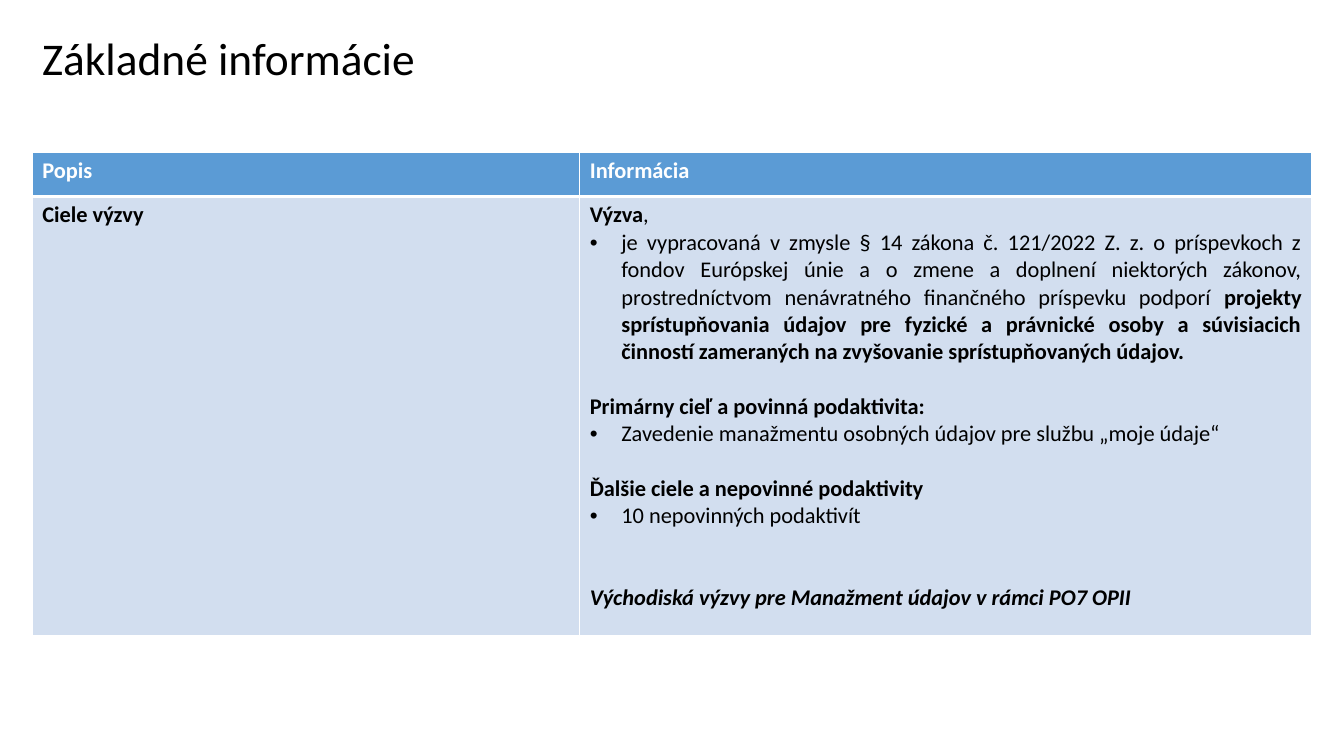
from dataclasses import dataclass

from lxml.etree import SubElement
from pptx import Presentation
from pptx.dml.color import RGBColor
from pptx.enum.text import MSO_ANCHOR, PP_ALIGN
from pptx.oxml.ns import qn
from pptx.util import Inches, Length, Pt

FONT = "Calibri"
BLACK, WHITE = "000000", "FFFFFF"
HEADER_FILL, BODY_FILL = "5B9BD5", "D2DEEF"
BODY_SIZE = 16
LINE_GAP = 19.5
LEFT_COLUMN = 3.2
HANGING_INDENT = 3.13


@dataclass(frozen=True)
class Line:
    runs: tuple[tuple[str, bool], ...]
    bullet: bool = False
    justified: bool = False
    italic: bool = False
    lines_before: int = 0


@dataclass(frozen=True)
class CellStyle:
    fill: str
    color: str
    borders: tuple[tuple[str, float], ...]


HEADER = CellStyle(HEADER_FILL, WHITE, (("lnL", 1), ("lnR", 1), ("lnT", 1), ("lnB", 3)))
BODY = CellStyle(BODY_FILL, BLACK, (("lnL", 1), ("lnR", 1), ("lnT", 3), ("lnB", 1)))

GOALS = [
    Line((("Výzva", True), (",", False)), justified=True),
    Line((
        ("je vypracovaná v zmysle § 14 zákona č. 121/2022 Z. z. o príspevkoch z fondov "
         "Európskej únie a o zmene a doplnení niektorých zákonov, prostredníctvom "
         "nenávratného finančného príspevku podporí ", False),
        ("projekty sprístupňovania údajov pre fyzické a právnické osoby a súvisiacich "
         "činností zameraných na zvyšovanie sprístupňovaných údajov.", True),
    ), bullet=True, justified=True),
    Line((("Primárny cieľ a povinná podaktivita:", True),), justified=True, lines_before=1),
    Line((("Zavedenie manažmentu osobných údajov pre službu „moje údaje“", False),),
         bullet=True, justified=True),
    Line((("Ďalšie ciele a nepovinné podaktivity", True),), justified=True, lines_before=1),
    Line((("10 nepovinných podaktivít", False),), bullet=True, justified=True),
    Line((("Východiská výzvy pre Manažment údajov v rámci PO7 OPII", True),),
         justified=True, italic=True, lines_before=2),
]

TABLE_ROWS = [
    (HEADER, [[Line((("Popis", True),))], [Line((("Informácia", True),))]]),
    (BODY, [[Line((("Ciele výzvy", True),))], GOALS]),
]


def grid(units: float) -> Length:
    return Inches(units / 10)


def rgb(value: str) -> RGBColor:
    return RGBColor.from_string(value)


def set_font(font, size: float, color: str) -> None:
    font.name = FONT
    font.size = Pt(size)
    font.color.rgb = rgb(color)


def add_bullet(paragraph) -> None:
    properties = paragraph._p.get_or_add_pPr()
    properties.set("marL", str(grid(HANGING_INDENT)))
    properties.set("indent", str(-grid(HANGING_INDENT)))
    SubElement(properties, qn("a:buFont"), typeface="Arial")
    SubElement(properties, qn("a:buChar"), char="•")


def write_lines(text_frame, lines: list[Line], color: str) -> None:
    for index, line in enumerate(lines):
        paragraph = text_frame.add_paragraph() if index else text_frame.paragraphs[0]
        paragraph.alignment = PP_ALIGN.JUSTIFY if line.justified else PP_ALIGN.LEFT
        paragraph.space_before = Pt(LINE_GAP * line.lines_before)
        if line.bullet:
            add_bullet(paragraph)
        set_font(paragraph.font, BODY_SIZE, color)
        paragraph.font.italic = line.italic
        for text, bold in line.runs:
            run = paragraph.add_run()
            run.text = text
            run.font.bold = bold


def style_cell(cell, style: CellStyle) -> None:
    properties = cell._tc.get_or_add_tcPr()
    for edge, width in style.borders:
        border = SubElement(properties, qn(f"a:{edge}"), w=str(Pt(width)))
        SubElement(SubElement(border, qn("a:solidFill")), qn("a:srgbClr"), val=WHITE)
    cell.fill.solid()
    cell.fill.fore_color.rgb = rgb(style.fill)


def add_title(slide, text: str) -> None:
    shape = slide.shapes.add_textbox(grid(LEFT_COLUMN), grid(3.5), grid(100), grid(5.1))
    text_frame = shape.text_frame
    text_frame.word_wrap = True
    text_frame.vertical_anchor = MSO_ANCHOR.MIDDLE
    paragraph = text_frame.paragraphs[0]
    paragraph.text = text
    paragraph.line_spacing = 0.9
    set_font(paragraph.font, 32.4, BLACK)


def add_information_table(slide) -> None:
    widths, heights = (54.3, 72.6), (4.4, 43.6)
    table = slide.shapes.add_table(
        len(heights), len(widths), grid(LEFT_COLUMN), grid(15.1),
        grid(sum(widths)), grid(sum(heights)),
    ).table
    for column, width in zip(table.columns, widths):
        column.width = grid(width)
    for row, height, (style, contents) in zip(table.rows, heights, TABLE_ROWS):
        row.height = grid(height)
        for cell, lines in zip(row.cells, contents):
            style_cell(cell, style)
            write_lines(cell.text_frame, lines, style.color)


def main() -> None:
    presentation = Presentation()
    presentation.slide_width = Inches(13.33)
    presentation.slide_height = Inches(7.5)
    slide = presentation.slides.add_slide(presentation.slide_layouts[6])
    add_title(slide, "Základné informácie")
    add_information_table(slide)
    presentation.save("out.pptx")


if __name__ == "__main__":
    main()
